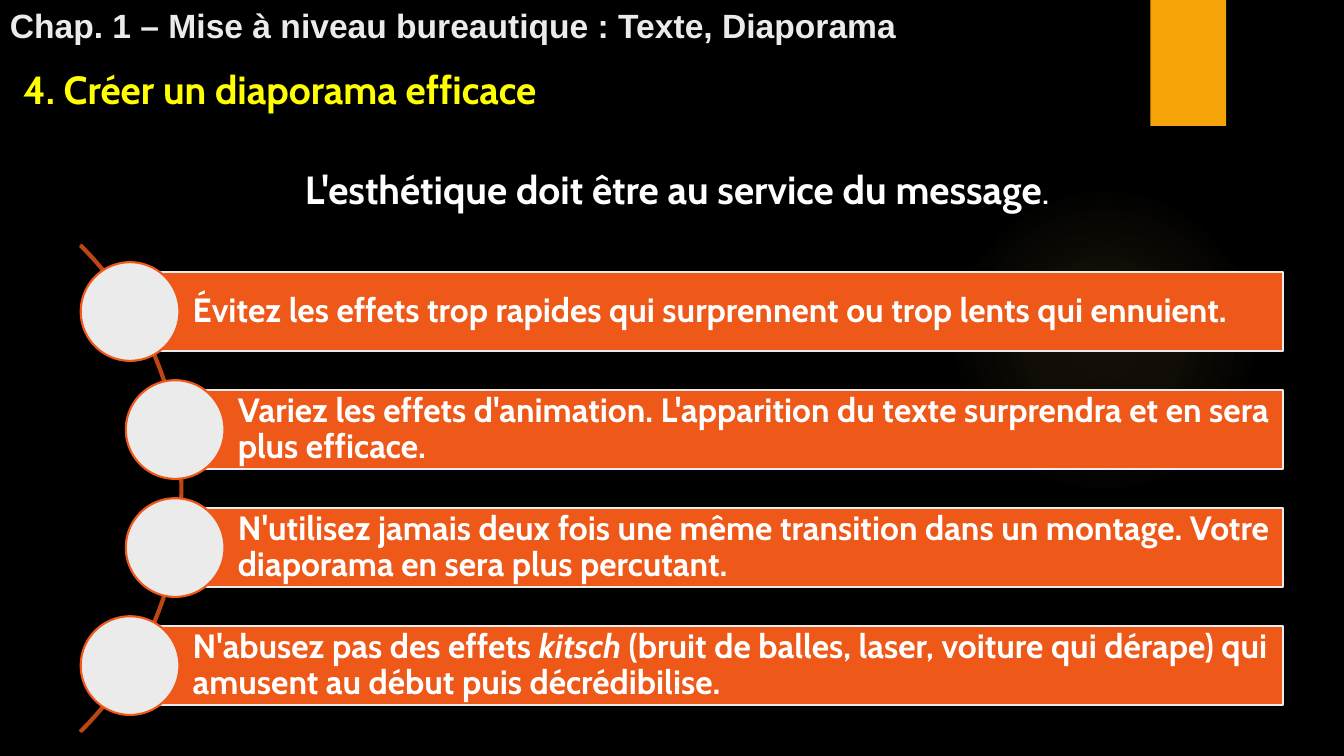
from lxml import etree
from pptx import Presentation
from pptx.dml.color import RGBColor
from pptx.enum.shapes import MSO_SHAPE
from pptx.enum.text import MSO_ANCHOR, PP_ALIGN
from pptx.oxml import parse_xml
from pptx.util import Pt

RECTANGLE = MSO_SHAPE.RECTANGLE
OVAL = MSO_SHAPE.OVAL
BLOCK_ARC = MSO_SHAPE.BLOCK_ARC
LEFT, CENTER = PP_ALIGN.LEFT, PP_ALIGN.CENTER
TOP, MIDDLE, BOTTOM = MSO_ANCHOR.TOP, MSO_ANCHOR.MIDDLE, MSO_ANCHOR.BOTTOM
DRAWING_NS = "http://schemas.openxmlformats.org/drawingml/2006/main"

BLACK, WHITE, PALE = "000000", "FFFFFF", "EBEBEB"
ORANGE, RUST, AMBER, GLOW, YELLOW = "EE5818", "BF4613", "F5A408", "FAC96A", "FFFF00"


def color(value):
    return RGBColor.from_string(value)


class SlideBuilder:
    font = "Cabin"
    line_width = 1.5

    def __init__(self, slide):
        self.slide = slide
        background = slide.background.fill
        background.solid()
        background.fore_color.rgb = color(BLACK)

    def shape(self, kind, left, top, width, height, fill=None, line=None):
        shape = self.slide.shapes.add_shape(
            kind, Pt(left), Pt(top), Pt(width), Pt(height))
        shape.shadow.inherit = False
        if fill:
            shape.fill.solid()
            shape.fill.fore_color.rgb = color(fill)
        else:
            shape.fill.background()
        if line:
            shape.line.color.rgb = color(line)
            shape.line.width = Pt(self.line_width)
        else:
            shape.line.fill.background()
        return shape

    def glow(self, left, top, size, hue, stops):
        halo = self.shape(OVAL, left, top, size, size)
        gradient = parse_xml(f'<a:gradFill xmlns:a="{DRAWING_NS}" rotWithShape="1"/>')
        stop_list = etree.SubElement(gradient, f"{{{DRAWING_NS}}}gsLst")
        for position, opacity in stops:
            stop = etree.SubElement(
                stop_list, f"{{{DRAWING_NS}}}gs", pos=str(position * 1000))
            tint = etree.SubElement(stop, f"{{{DRAWING_NS}}}srgbClr", val=hue)
            etree.SubElement(tint, f"{{{DRAWING_NS}}}alpha", val=str(opacity * 1000))
        radial = etree.SubElement(gradient, f"{{{DRAWING_NS}}}path")
        radial.set("path", "circle")
        etree.SubElement(radial, f"{{{DRAWING_NS}}}fillToRect",
                         l="50000", t="50000", r="50000", b="50000")
        properties = halo.element.spPr
        properties.replace(properties.find(f"{{{DRAWING_NS}}}noFill"), gradient)

    def add_runs(self, frame, runs, size, hue, font=None, align=LEFT, anchor=TOP, spacing=1.0):
        frame.word_wrap = True
        frame.vertical_anchor = anchor
        paragraph = frame.paragraphs[0]
        paragraph.alignment = align
        paragraph.line_spacing = spacing
        for words, bold, italic in runs:
            run = paragraph.add_run()
            run.text = words
            run.font.name = font or self.font
            run.font.size = Pt(size)
            run.font.bold = bold
            run.font.italic = italic
            run.font.color.rgb = color(hue)

    def text(self, left, top, width, height, runs, size, hue, **style):
        box = self.slide.shapes.add_textbox(Pt(left), Pt(top), Pt(width), Pt(height))
        self.add_runs(box.text_frame, runs, size, hue, **style)

    def arc(self, left, top, size, adjustments, line):
        arc = self.shape(BLOCK_ARC, left, top, size, size, line=line)
        for index, value in enumerate(adjustments):
            arc.adjustments[index] = value

    def advice(self, center_x, center_y, right, runs):
        height, diameter = 56.4, 70.5
        bar = self.shape(RECTANGLE, center_x, center_y - height / 2,
                         right - center_x, height, ORANGE, PALE)
        frame = bar.text_frame
        frame.margin_left = Pt(44.8)
        frame.margin_top = frame.margin_right = frame.margin_bottom = Pt(5)
        self.add_runs(frame, runs, 24, WHITE, anchor=MIDDLE, spacing=0.9)
        self.shape(OVAL, center_x - diameter / 2, center_y - diameter / 2,
                   diameter, diameter, PALE, ORANGE)


def main():
    deck = Presentation()
    deck.slide_width, deck.slide_height = Pt(960), Pt(540)
    builder = SlideBuilder(deck.slides.add_slide(deck.slide_layouts[6]))

    builder.glow(677.5, 131.8, 221.8, GLOW, [(0, 7), (36, 6), (69, 0)])
    builder.shape(RECTANGLE, 821.8, 0, 54, 90, AMBER)

    builder.text(0, 0, 962.6, 36,
                 [("Chap. 1 – Mise à niveau bureautique : Texte, Diaporama", True, False)],
                 24, PALE, font="Arial", anchor=BOTTOM)
    builder.text(9.4, 43.2, 484.6, 41,
                 [("4. Créer un diaporama efficace", True, False)], 28, YELLOW)
    builder.text(179.3, 114.5, 609.1, 41,
                 [("L'esthétique doit être au service du message", True, False),
                  (".", False, False)], 28, WHITE, align=CENTER)

    builder.arc(-361.5, 103, 491.8, (189, 27, 0.003), RUST)

    outer, inner = 92.9, 125.1
    advices = [
        (outer, [("Évitez les effets trop rapides qui surprennent ou trop lents "
                  "qui ennuient.", True, False)]),
        (inner, [("Variez les effets d'animation. L'apparition du texte surprendra "
                  "et en sera plus efficace.", True, False)]),
        (inner, [("N'utilisez jamais deux fois une même transition dans un montage. "
                  "Votre diaporama en sera plus percutant.", True, False)]),
        (outer, [("N'abusez pas des effets ", True, False),
                 ("kitsch", True, True),
                 (" (bruit de balles, laser, voiture qui dérape) qui amusent au début "
                  "puis décrédibilise.", True, False)]),
    ]
    first_center, pitch = 222.5, 84.3
    for row, (center_x, runs) in enumerate(advices):
        builder.advice(center_x, first_center + row * pitch, 916.5, runs)

    deck.save("out.pptx")


if __name__ == "__main__":
    main()
